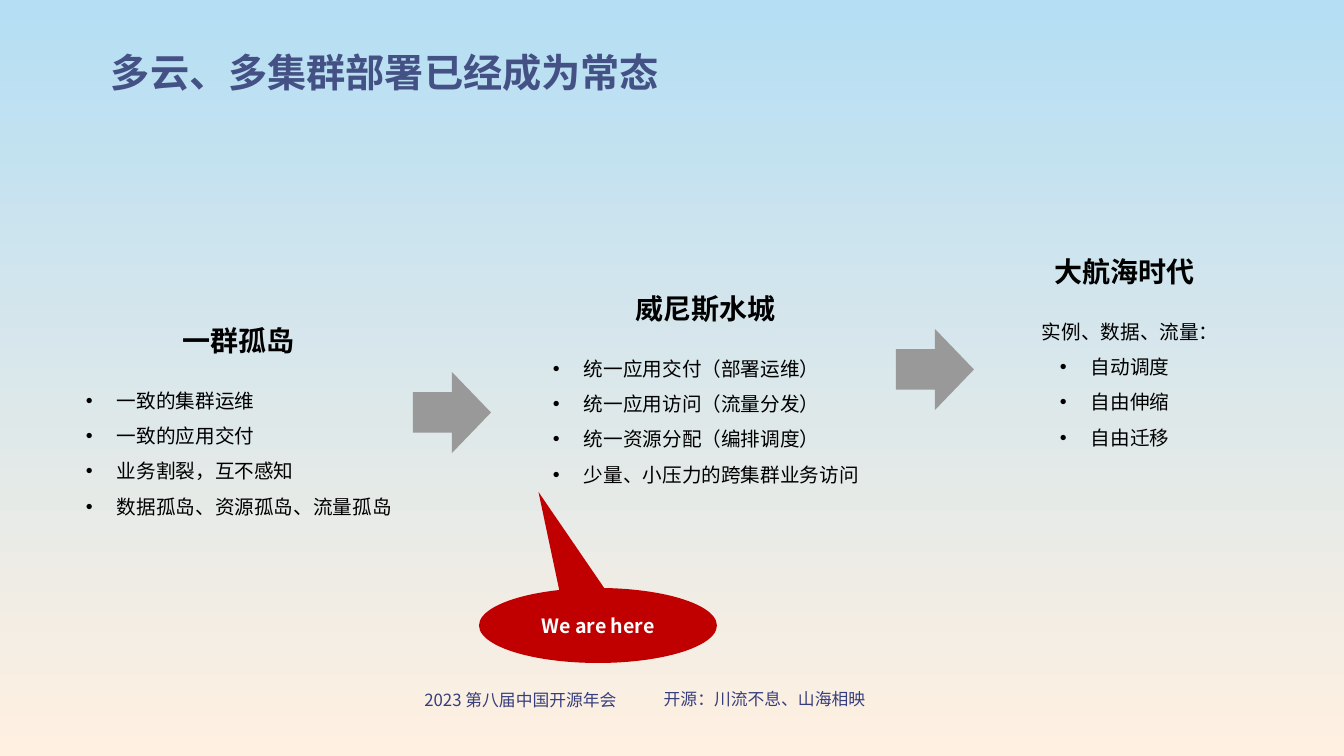
from lxml import etree
from pptx import Presentation
from pptx.dml.color import RGBColor
from pptx.enum.shapes import MSO_SHAPE
from pptx.enum.text import MSO_ANCHOR, MSO_AUTO_SIZE, PP_ALIGN
from pptx.oxml.ns import qn
from pptx.util import Pt

PX = 914400 / 100.8
FONT = "Noto Sans CJK SC"
SKY = RGBColor(0xB5, 0xDE, 0xF4)
SAND = RGBColor(0xFF, 0xF0, 0xE1)
NAVY = RGBColor(0x36, 0x3E, 0x7D)
INDIGO = RGBColor(0x44, 0x51, 0x85)
BLACK = RGBColor(0, 0, 0)
WHITE = RGBColor(255, 255, 255)
GREY = RGBColor(0x99, 0x99, 0x99)
RED = RGBColor(0xC0, 0, 0)
LEFT, CENTER = PP_ALIGN.LEFT, PP_ALIGN.CENTER
TOP, MIDDLE = MSO_ANCHOR.TOP, MSO_ANCHOR.MIDDLE
FIT, NONE = MSO_AUTO_SIZE.SHAPE_TO_FIT_TEXT, MSO_AUTO_SIZE.NONE
ARROW, CALLOUT = MSO_SHAPE.RIGHT_ARROW, MSO_SHAPE.OVAL_CALLOUT

TITLE = "多云、多集群部署已经成为常态"
FOOTERS = [
    ("2023 第八届中国开源年会", (382, 685, 277, 30)),
    ("开源：川流不息、山海相映", (643, 684, 243, 30)),
]
# heading, lead line, bullets, left, top, list width, bullet text indent
STAGES = [
    ("一群孤岛", None,
     ["一致的集群运维", "一致的应用交付", "业务割裂，互不感知",
      "数据孤岛、资源孤岛、流量孤岛"], 76, 324, 318, 31),
    ("威尼斯水城", None,
     ["统一应用交付（部署运维）", "统一应用访问（流量分发）",
      "统一资源分配（编排调度）", "少量、小压力的跨集群业务访问"],
     543, 292, 308, 31),
    ("大航海时代", "实例、数据、流量：",
     ["自动调度", "自由伸缩", "自由迁移"], 962, 255, 326, 119),
]
ARROWS = [(413, 372), (896, 329)]
HERE = "We are here"
HANG, LEAD = 31, 70


def emu(*lengths):
    return [round(n * PX) for n in lengths]


def indent(para, left, hang=0):
    """Indent a paragraph; a hanging one gets a bullet."""
    props = para._p.get_or_add_pPr()
    left, hang = emu(left, hang)
    props.set("marL", str(left))
    props.set("indent", str(-hang))
    if hang:
        tint = etree.SubElement(props, qn("a:buClr"))
        etree.SubElement(tint, qn("a:srgbClr"), val=str(BLACK))
        etree.SubElement(props, qn("a:buFont"), typeface="Arial")
        etree.SubElement(props, qn("a:buChar"), char="•")


def write(shape, lines, size=14, color=BLACK, bold=False, align=LEFT,
          anchor=TOP, wrap=True, inset=True, fit=NONE, space=None, indents=()):
    frame = shape.text_frame
    frame.word_wrap = wrap
    frame.auto_size = fit
    frame.vertical_anchor = anchor
    if not inset:
        frame.margin_left = frame.margin_right = 0
        frame.margin_top = frame.margin_bottom = 0
    for i, line in enumerate(lines):
        para = frame.add_paragraph() if i else frame.paragraphs[0]
        if indents:
            indent(para, *indents[i])
        para.alignment = align
        if space:
            para.line_spacing = space
        run = para.add_run()
        run.text = line
        run.font.size = Pt(size)
        run.font.bold = bold
        run.font.color.rgb = color
        run.font.name = FONT
        etree.SubElement(run._r.get_or_add_rPr(), qn("a:ea"), typeface=FONT)


def add_text(slide, box, lines, **style):
    write(slide.shapes.add_textbox(*emu(*box)), lines, **style)


def add_solid(slide, kind, box, color):
    shape = slide.shapes.add_shape(kind, *emu(*box))
    shape.shadow.inherit = False
    shape.fill.solid()
    shape.fill.fore_color.rgb = color
    shape.line.fill.background()
    return shape


def add_stage(slide, head, lead, items, left, top, width, left_in):
    add_text(slide, (left + 47, top, 231, 30), [head], size=20, bold=True,
             align=CENTER, wrap=False, inset=False)
    lines = [lead] * bool(lead) + items
    indents = [(LEAD,)] * bool(lead) + [(left_in, HANG)] * len(items)
    add_text(slide, (left, top + 48, width, 142), lines, wrap=False,
             space=1.5, indents=indents)


def main():
    deck = Presentation()
    deck.slide_width, deck.slide_height = emu(1344, 756)
    slide = deck.slides.add_slide(deck.slide_layouts[6])
    fill = slide.background.fill
    fill.gradient()
    fill.gradient_angle = 270
    for stop, color, place in zip(fill.gradient_stops, (SKY, SAND), (0, 1)):
        stop.color.rgb = color
        stop.position = place

    for words, box in FOOTERS:
        add_text(slide, box, [words], size=12, color=NAVY, align=CENTER,
                 fit=FIT)
    add_text(slide, (101, 21, 994, 108), [TITLE], size=28, color=INDIGO,
             bold=True, anchor=MIDDLE, space=0.9)
    for stage in STAGES:
        add_stage(slide, *stage)
    for left, top in ARROWS:
        add_solid(slide, ARROW, (left, top, 78, 81), GREY)

    here = add_solid(slide, CALLOUT, (479, 588, 238, 75), RED)
    here.adjustments[0] = -0.25
    here.adjustments[1] = -1.78
    write(here, [HERE], color=WHITE, bold=True, align=CENTER, anchor=MIDDLE,
          inset=False)
    deck.save("out.pptx")


if __name__ == "__main__":
    main()
